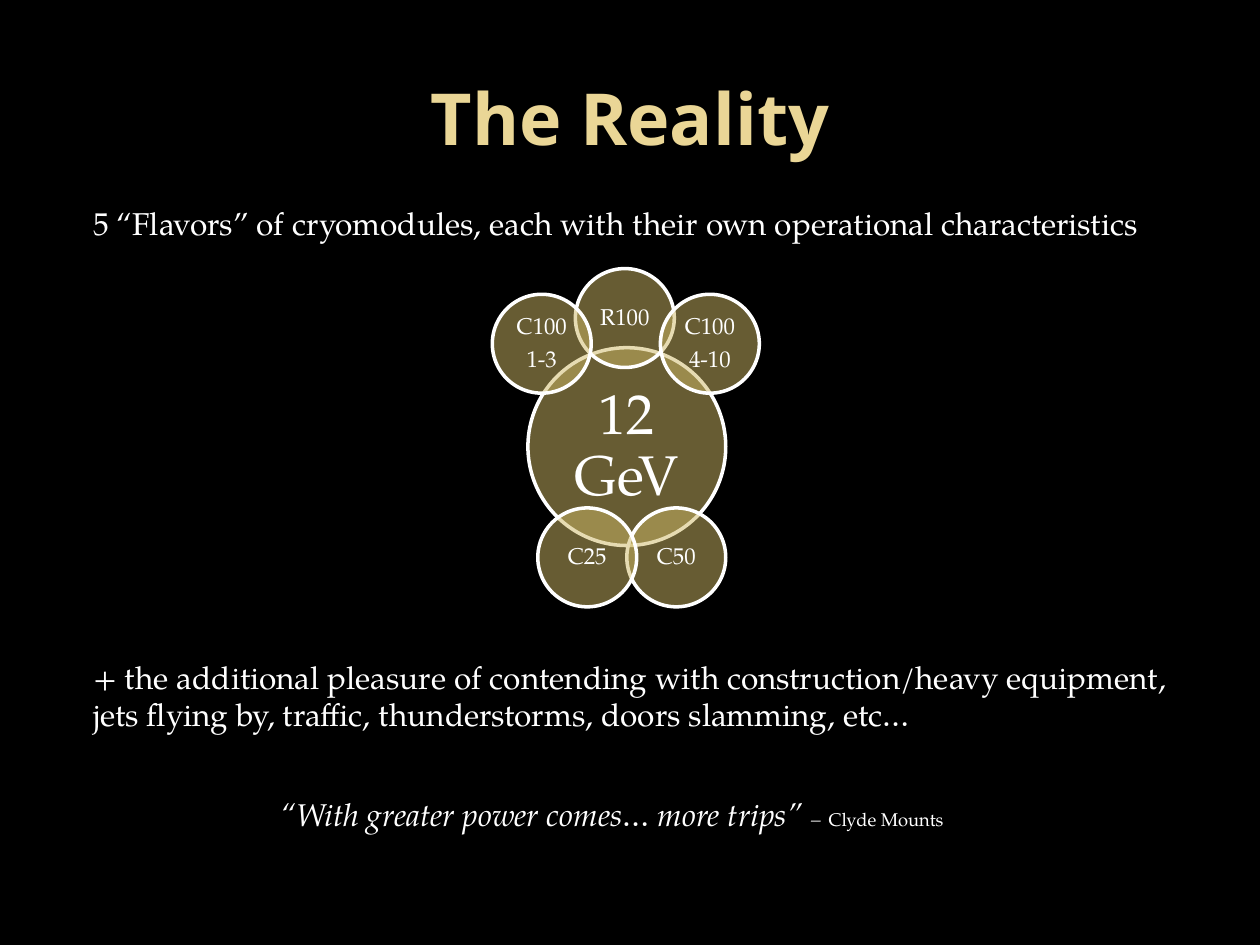
from lxml.etree import SubElement
from pptx import Presentation
from pptx.dml.color import RGBColor
from pptx.enum.shapes import MSO_SHAPE as Shape
from pptx.enum.text import MSO_ANCHOR as Anchor, MSO_AUTO_SIZE as AutoSize, PP_ALIGN as Align
from pptx.oxml.ns import qn
from pptx.util import Inches, Pt

COLORS = {"back": "000000", "title": "EAD696", "disc": "CEB966", "text": "FFFFFF"}
SERIF, SANS = "TeX Gyre Pagella", "Noto Sans"
WIDTH, HEIGHT = 10, 7.5
HUB = (0.419, 0.368, 0.157, 0.2093)
SATELLITES = [
    ("R100", -0.01, -0.65),
    ("C50", 0.25, 0.56),
    ("C100\n1-3", -0.43, -0.52),
    ("C25", -0.2, 0.56),
    ("C100\n4-10", 0.42, -0.52),
]
INTRO = [[("5 “Flavors” of cryomodules, each with their own operational characteristics", 18, False)]]
EXTRAS = [
    [("+ the additional pleasure of contending with construction/heavy equipment,", 18, False)],
    [("jets flying by, traffic, thunderstorms, doors slamming, etc…", 18, False)],
]
QUOTE = [[
    ("“With greater power comes… more trips” ", 18, True),
    ("–", 11, True),
    (" ", 18, True),
    ("Clyde Mounts", 10.5, False),
]]


def color(name):
    """Return the named colour."""
    return RGBColor.from_string(COLORS[name])


def to_inches(box):
    """Turn shares of the slide's size into lengths in inches."""
    x, y, w, h = box
    return x * WIDTH, y * HEIGHT, w * WIDTH, h * HEIGHT


def set_font(font, name, size, shade, bold=False):
    """Set face, size, colour and weight of a font."""
    font.name, font.size, font.bold = name, Pt(size), bold
    font.color.rgb = color(shade)


def add_title(s, box, text):
    """Place and format the title placeholder."""
    sp = s.shapes.title
    sp.left, sp.top, sp.width, sp.height = map(Inches, to_inches(box))
    sp.text_frame.text = text
    sp.text_frame.vertical_anchor = Anchor.MIDDLE
    p = sp.text_frame.paragraphs[0]
    p.alignment = Align.CENTER
    set_font(p.font, SANS, 41, "title", True)


def add_disc(s, cx, cy, size, text, pts, inset):
    """Draw a translucent labelled circle around a centre."""
    sp = s.shapes.add_shape(Shape.OVAL, *map(Inches, (cx - size / 2, cy - size / 2, size, size)))
    sp.shadow.inherit = False
    sp.fill.solid()
    sp.fill.fore_color.rgb = color("disc")
    clr = sp.fill._xPr.find(qn("a:solidFill"))[0]
    SubElement(clr, qn("a:alpha")).set("val", "50000")
    sp.line.color.rgb = color("text")
    sp.line.width = Pt(2)
    tf = sp.text_frame
    tf.word_wrap, tf.vertical_anchor = True, Anchor.MIDDLE
    tf.margin_left = tf.margin_right = tf.margin_top = tf.margin_bottom = Inches(inset)
    tf.text = text
    for p in tf.paragraphs:
        p.alignment, p.line_spacing, p.space_after = Align.CENTER, 0.9, Pt(0.35 * pts)
        set_font(p.font, SERIF, pts, "text")


def add_cluster(s, box):
    """Draw the hub in its box and half-size satellites around it."""
    x, y, size, h = to_inches(box)
    cx, cy = x + size / 2, y + h / 2
    add_disc(s, cx, cy, size, "12 GeV", 32, 0.04)
    for text, dx, dy in SATELLITES:
        add_disc(s, cx + dx * size, cy + dy * size, size / 2, text, 13, 0.02)


def add_text(s, box, lines):
    """Add a text box with one paragraph for each list of runs."""
    tf = s.shapes.add_textbox(*map(Inches, to_inches(box))).text_frame
    tf.word_wrap, tf.auto_size = False, AutoSize.SHAPE_TO_FIT_TEXT
    for i, runs in enumerate(lines):
        p = tf.add_paragraph() if i else tf.paragraphs[0]
        for text, size, italic in runs:
            r = p.add_run()
            r.text = text
            set_font(r.font, SERIF, size, "text")
            r.font.italic = italic


def main():
    """Build the slide and save it."""
    prs = Presentation()
    prs.slide_width, prs.slide_height = Inches(WIDTH), Inches(HEIGHT)
    s = prs.slides.add_slide(prs.slide_layouts[5])
    s.background.fill.solid()
    s.background.fill.fore_color.rgb = color("back")
    add_title(s, (0.05, 0.04, 0.9, 0.1667), "The Reality")
    add_cluster(s, HUB)
    add_text(s, (0.064, 0.2093, 0.869, 0.0533), INTRO)
    add_text(s, (0.064, 0.6893, 0.881, 0.0947), EXTRAS)
    add_text(s, (0.213, 0.8347, 0.575, 0.0533), QUOTE)
    prs.save("out.pptx")


if __name__ == "__main__":
    main()
